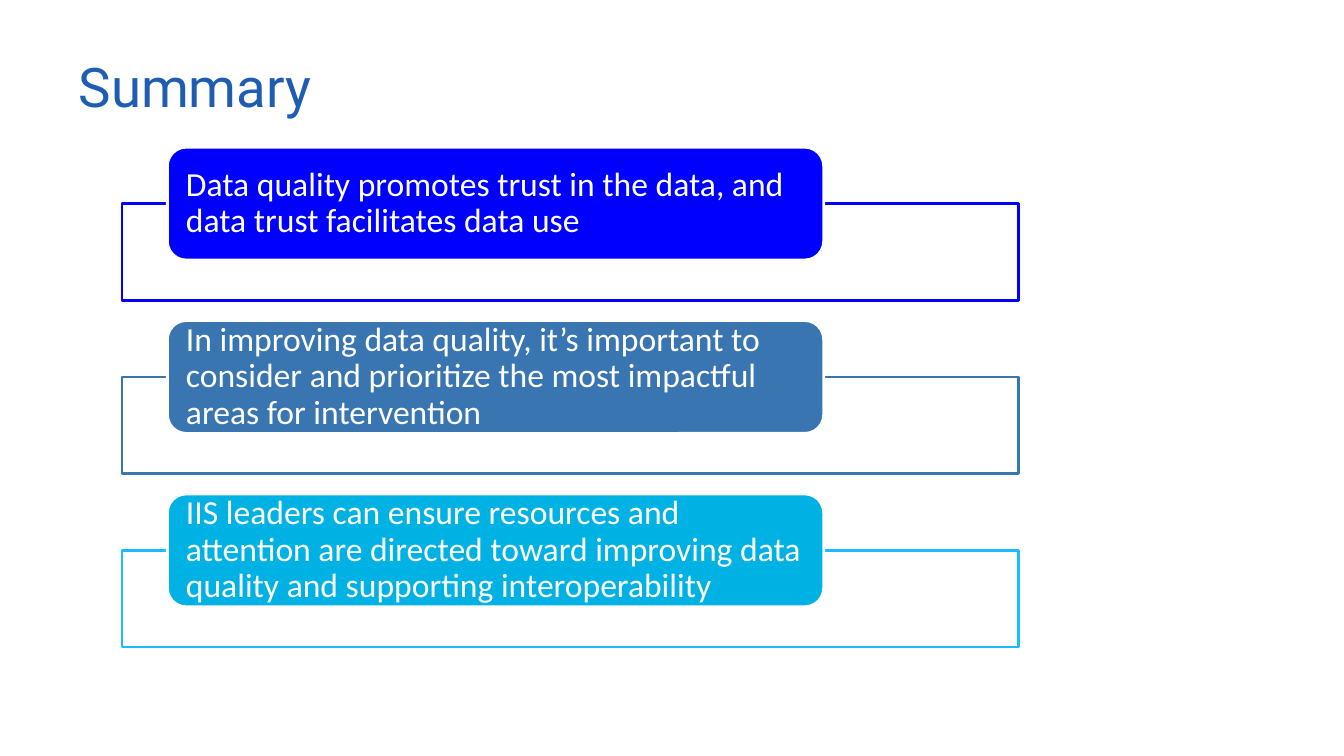
from pptx import Presentation
from pptx.dml.color import RGBColor
from pptx.enum.shapes import MSO_SHAPE
from pptx.enum.text import MSO_ANCHOR, MSO_AUTO_SIZE, PP_ALIGN
from pptx.oxml.ns import qn
from pptx.util import Inches, Pt
from lxml.etree import SubElement

theme = {
    "title": ("Roboto", 39, "1E5DB2"),
    "label": ("Calibri", 24, "FFFFFF"),
    "white": "FFFFFF",
    "line": 2,
}

# Label text, label fill, frame line
points = [
    ("Data quality promotes trust in the data, and data trust "
     "facilitates data use", "0000FF", "0000FF"),
    ("In improving data quality, it’s important to consider and prioritize "
     "the most impactful areas for intervention", "3975B0", "3975B0"),
    ("IIS leaders can ensure resources and attention are directed toward "
     "improving data quality and supporting interoperability",
     "00B2E3", "1BBCFF"),
]
top, pitch, drop = 1.46, 1.72, 0.56


def write(shape, text, style):
    frame = shape.text_frame
    frame.text = text
    layout = {"word_wrap": True, "auto_size": MSO_AUTO_SIZE.NONE,
              "vertical_anchor": MSO_ANCHOR.MIDDLE}
    for side in ("left", "top", "right", "bottom"):
        layout[f"margin_{side}"] = Inches(0.13)
    for key, value in layout.items():
        setattr(frame, key, value)
    para = frame.paragraphs[0]
    para.alignment, para.line_spacing = PP_ALIGN.LEFT, 0.9
    name, size, color = style
    for key, value in {"name": name, "size": Pt(size)}.items():
        setattr(para.font, key, value)
    para.font.color.rgb = RGBColor.from_string(color)


def block(kind, box, fill, line):
    shape = slide.shapes.add_shape(kind, *map(Inches, box))
    shape.shadow.inherit = False
    shape.fill.solid()
    shape.fill.fore_color.rgb = RGBColor.from_string(fill)
    shape.line.color.rgb = RGBColor.from_string(line)
    shape.line.width = Pt(theme["line"])
    return shape


deck = Presentation()
deck.slide_width, deck.slide_height = Inches(13.33), Inches(7.5)
slide = deck.slides.add_slide(deck.slide_layouts[5])

# Title
title = slide.shapes.title
place = {"left": 0.65, "top": 0.35, "width": 10.3, "height": 1.08}
for key, value in place.items():
    setattr(title, key, Inches(value))
write(title, "Summary", theme["title"])

# One frame with an overlapping label per point
for row, (text, fill, line) in enumerate(points):
    y = top + row * pitch
    frame = block(MSO_SHAPE.RECTANGLE, (1.21, y + drop, 8.89, 0.96),
                  theme["white"], line)
    tint = frame.fill.fore_color._xFill.find(qn("a:srgbClr")) \
        if hasattr(frame.fill.fore_color, "_xFill") \
        else frame.element.spPr.find(qn("a:solidFill")).find(qn("a:srgbClr"))
    SubElement(tint, qn("a:alpha"), val="89000")
    label = block(MSO_SHAPE.ROUNDED_RECTANGLE, (1.66, y, 6.51, 1.12),
                  fill, theme["white"])
    label.adjustments[0] = 0.167
    write(label, text, theme["label"])

deck.save("out.pptx")
